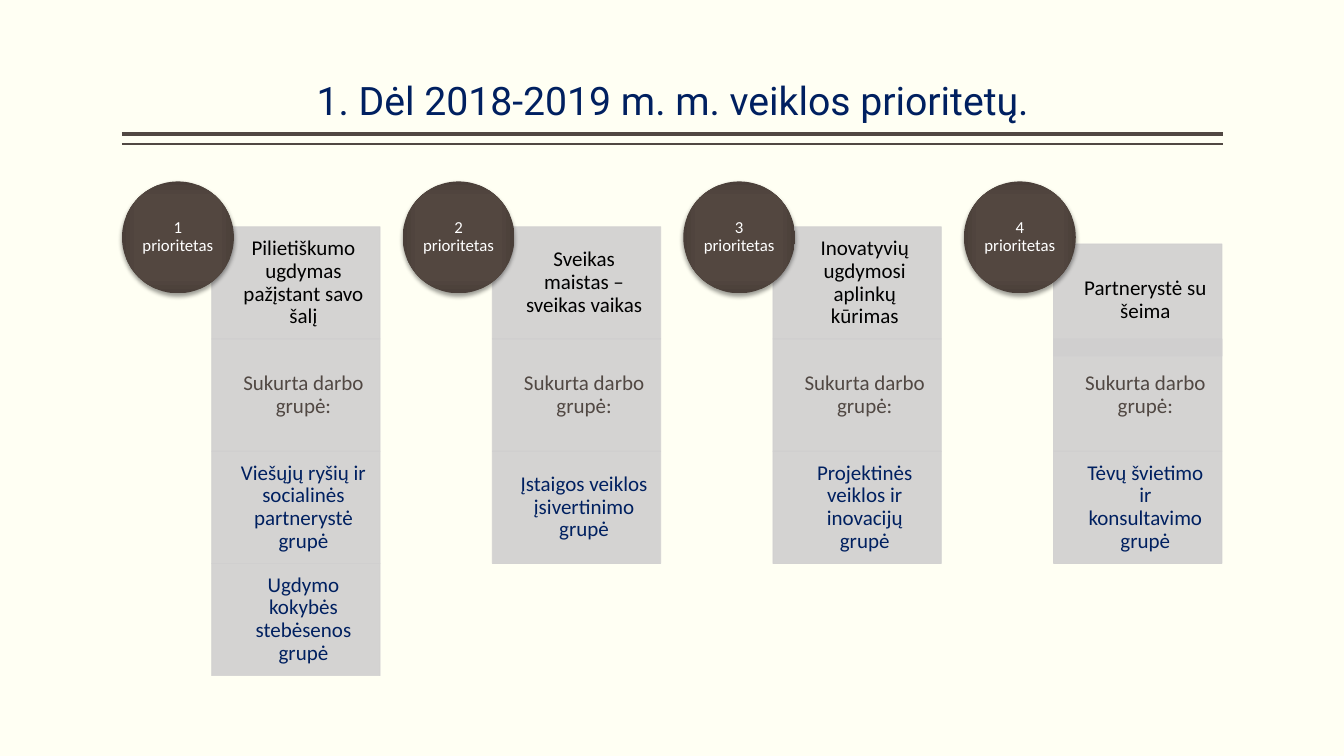
from lxml import etree
from pptx import Presentation
from pptx.dml.color import RGBColor
from pptx.enum.shapes import MSO_CONNECTOR, MSO_SHAPE
from pptx.enum.text import MSO_ANCHOR, PP_ALIGN
from pptx.oxml import parse_xml
from pptx.oxml.ns import nsdecls, qn
from pptx.util import Inches, Pt

IVORY = RGBColor(0xFF, 0xFF, 0xF3)
BROWN = RGBColor(0x51, 0x48, 0x43)
NAVY = RGBColor(0x00, 0x20, 0x60)
GREY = RGBColor(0xD0, 0xCF, 0xCF)
BLACK = RGBColor(0x00, 0x00, 0x00)
WHITE = RGBColor(0xFF, 0xFF, 0xFF)
BADGE_STOPS = [
    (0, RGBColor(0x54, 0x47, 0x40)),
    (71, RGBColor(0x53, 0x47, 0x40)),
    (100, RGBColor(0x4A, 0x3F, 0x39)),
]

LEFT, WIDTH = 1.21, 10.92
COLUMN_PITCH = 8.35 / 3
BADGE_TOP, BADGE_SIZE = 1.8, 1.11
BOX_OFFSET, BOX_WIDTH = 0.89, 1.67
BOX_TOP, BOX_HEIGHT = 2.25, 3.34 / 3
GROUP_HEADING = "Sukurta darbo grupė:"

# (priority, working groups, drop of the priority box)
PRIORITIES = [
    ("Pilietiškumo ugdymas pažįstant savo šalį",
     ["Viešųjų ryšių ir socialinės partnerystė grupė",
      "Ugdymo kokybės stebėsenos grupė"], 0),
    ("Sveikas maistas – sveikas vaikas",
     ["Įstaigos veiklos įsivertinimo grupė"], 0),
    ("Inovatyvių ugdymosi aplinkų kūrimas",
     ["Projektinės veiklos ir inovacijų grupė"], 0),
    ("Partnerystė su šeima",
     ["Tėvų švietimo ir konsultavimo grupė"], 0.17),
]


def write_text(shape, text, *, size, color, font="Calibri",
               anchor=MSO_ANCHOR.MIDDLE, insets=(0, 0, 0, 0)):
    """Fill a shape with one centred paragraph; insets run left, top, right, bottom."""
    frame = shape.text_frame
    frame.word_wrap = True
    frame.vertical_anchor = anchor
    (frame.margin_left, frame.margin_top,
     frame.margin_right, frame.margin_bottom) = map(Inches, insets)
    paragraph = frame.paragraphs[0]
    paragraph.alignment = PP_ALIGN.CENTER
    paragraph.line_spacing = 0.9
    run = paragraph.add_run()
    run.text = text
    run.font.size = Pt(size)
    run.font.name = font
    run.font.color.rgb = color


def set_alpha(color_format_parent, percent):
    for color in color_format_parent.iter(qn("a:srgbClr")):
        etree.SubElement(color, qn("a:alpha"), val=str(percent * 1000))


def add_rule(slide, y, weight):
    rule = slide.shapes.add_connector(
        MSO_CONNECTOR.STRAIGHT,
        Inches(LEFT), Inches(y), Inches(LEFT + WIDTH), Inches(y))
    rule.line.color.rgb = BROWN
    rule.line.width = Pt(weight)
    etree.SubElement(rule._element.spPr, qn("a:effectLst"))


def add_title(slide, text):
    title = slide.shapes.add_textbox(
        Inches(LEFT), Inches(0.08), Inches(WIDTH), Inches(1.2))
    write_text(title, text, size=28, color=NAVY, font="Roboto",
               anchor=MSO_ANCHOR.BOTTOM, insets=(0, 0.05, 0, 0.05))


def add_box(slide, left, top, text, color):
    box = slide.shapes.add_shape(
        MSO_SHAPE.RECTANGLE,
        Inches(left), Inches(top), Inches(BOX_WIDTH), Inches(BOX_HEIGHT))
    box.shadow.inherit = False
    box.fill.solid()
    box.fill.fore_color.rgb = GREY
    box.line.color.rgb = GREY
    box.line.width = Pt(0.5)
    set_alpha(box._element.spPr, 90)
    write_text(box, text, size=15, color=color,
               insets=(0.27, 0.12, 0.12, 0.12))


def add_badge(slide, left, text):
    """Add a round label with a centred gradient and a soft shadow below."""
    badge = slide.shapes.add_shape(
        MSO_SHAPE.OVAL,
        Inches(left), Inches(BADGE_TOP), Inches(BADGE_SIZE), Inches(BADGE_SIZE))
    badge.shadow.inherit = False
    badge.line.fill.background()
    badge.fill.background()
    properties = badge._element.spPr
    stops = "".join(
        f'<a:gs pos="{position * 1000}"><a:srgbClr val="{color}"/></a:gs>'
        for position, color in BADGE_STOPS)
    gradient = parse_xml(
        f'<a:gradFill {nsdecls("a")} rotWithShape="1"><a:gsLst>{stops}</a:gsLst>'
        '<a:path path="rect"><a:fillToRect l="50000" t="50000" r="50000" b="50000"/>'
        '</a:path></a:gradFill>')
    properties.replace(properties.find(qn("a:noFill")), gradient)
    shadow = etree.SubElement(
        properties.find(qn("a:effectLst")), qn("a:outerShdw"),
        blurRad=str(Pt(3.1)), dist=str(Pt(2)), dir="5400000", rotWithShape="0")
    etree.SubElement(shadow, qn("a:srgbClr"), val=str(BLACK))
    set_alpha(shadow, 38)
    write_text(badge, text, size=12, color=WHITE)


def add_priority(slide, index, priority, groups, drop):
    left = LEFT + index * COLUMN_PITCH
    box_left = left + BOX_OFFSET
    add_box(slide, box_left, BOX_TOP + drop, priority, BLACK)
    rows = [(GROUP_HEADING, BROWN)] + [(group, NAVY) for group in groups]
    for row, (text, color) in enumerate(rows, start=1):
        add_box(slide, box_left, BOX_TOP + row * BOX_HEIGHT, text, color)
    add_badge(slide, left, f"{index + 1} prioritetas")


def main():
    presentation = Presentation()
    presentation.slide_width = Inches(13.33)
    presentation.slide_height = Inches(7.5)
    slide = presentation.slides.add_slide(presentation.slide_layouts[6])
    slide.background.fill.solid()
    slide.background.fill.fore_color.rgb = IVORY

    add_rule(slide, 1.33, 3)
    add_rule(slide, 1.43, 1)
    add_title(slide, "1. Dėl 2018-2019 m. m. veiklos prioritetų.")
    for index, (priority, groups, drop) in enumerate(PRIORITIES):
        add_priority(slide, index, priority, groups, drop)

    presentation.save("out.pptx")


if __name__ == "__main__":
    main()
